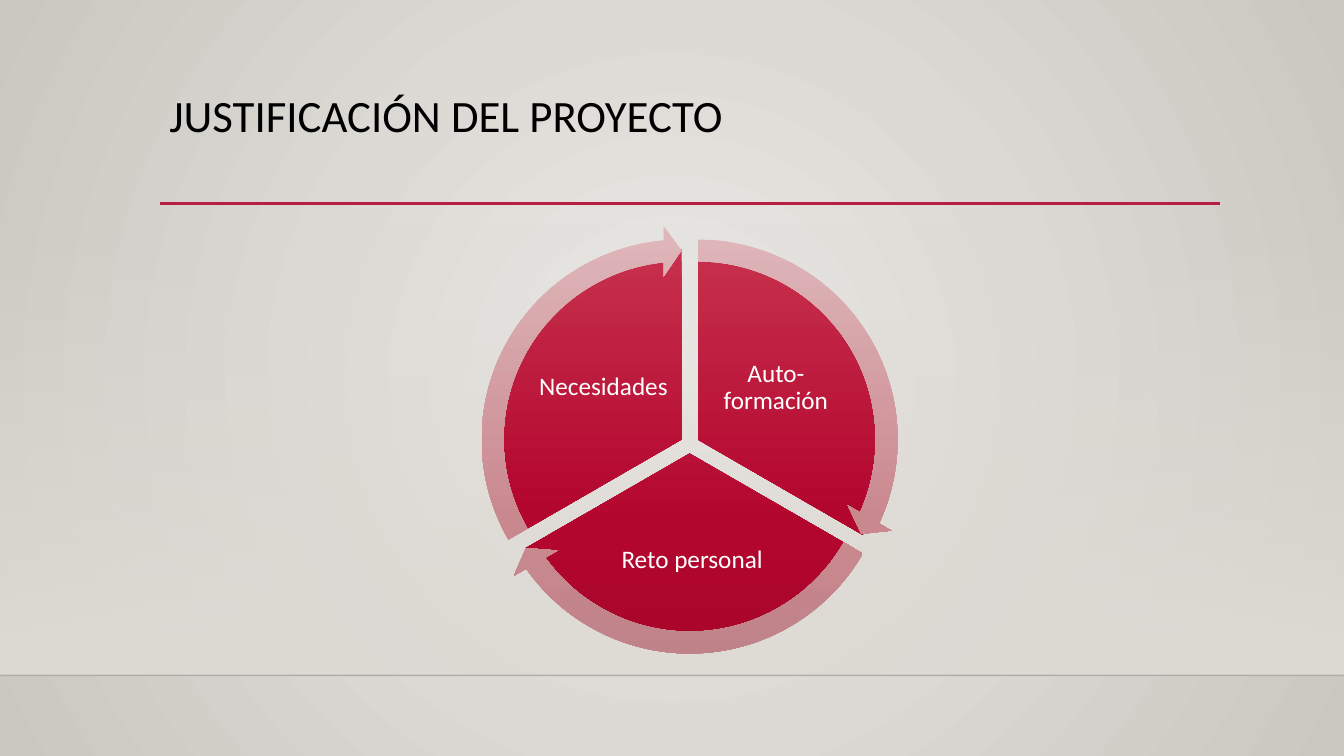
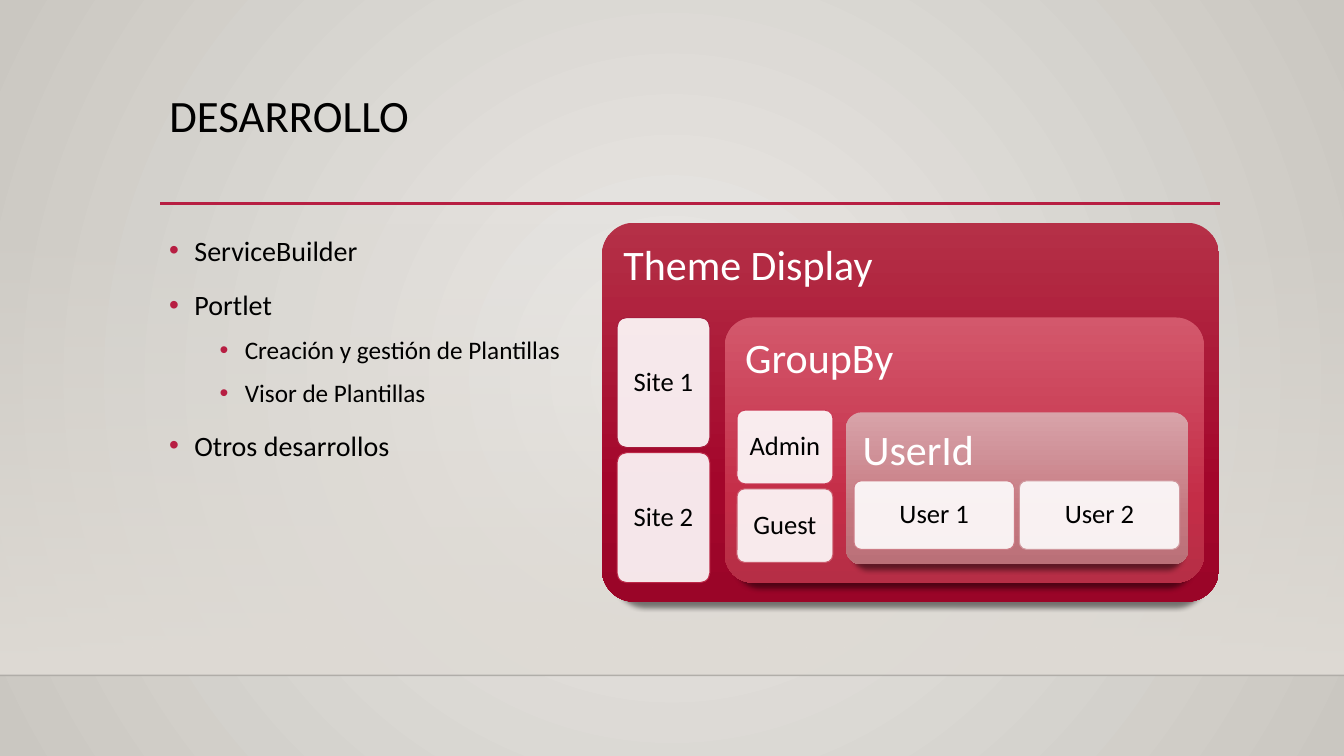
from lxml.etree import SubElement
from pptx import Presentation
from pptx.dml.color import RGBColor
from pptx.enum.shapes import MSO_CONNECTOR, MSO_SHAPE
from pptx.enum.text import MSO_ANCHOR, MSO_AUTO_SIZE, PP_ALIGN
from pptx.oxml.ns import qn
from pptx.util import Inches, Pt

# Shared style
FONT = "Calibri"
BLACK = RGBColor(0x00, 0x00, 0x00)
WHITE = RGBColor(0xFF, 0xFF, 0xFF)
CRIMSON = RGBColor(0xB7, 0x1E, 0x42)
SAND = RGBColor(0xDF, 0xDB, 0xD5)
PAPER = RGBColor(0xEC, 0xEA, 0xE7)
STONE = RGBColor(0xCA, 0xC7, 0xC1)


def shades(*codes):
    """Top, lower and bottom tone of a vertical gradient."""
    return list(zip((0, 69, 100), map(RGBColor.from_string, codes)))


RED = shades("C7304C", "B3062F", "AA062C")
PINK = shades("DFB7BB", "C9888E", "BE8288")
DEEP = shades("B53047", "A3062B", "9A0528")
ROSE = shades("D3586C", "C42D47", "B62E46")
DUSTY = shades("D8A3A9", "C4767E", "BA7078")


def add_alpha(parent, percent):
    for clr in parent.iter(qn("a:srgbClr")):
        SubElement(clr, qn("a:alpha"), val=str(percent * 1000))


def set_gradient(fill, owner, stops, radial=False):
    """Fill with (position, colour) stops, downwards or from the centre."""
    fill.gradient()
    grad = owner.xpath(".//a:gradFill")[0]
    for child in list(grad):
        grad.remove(child)
    gs_list = SubElement(grad, qn("a:gsLst"))
    for pos, color in stops:
        gs = SubElement(gs_list, qn("a:gs"), pos=str(pos * 1000))
        SubElement(gs, qn("a:srgbClr"), val=str(color))
    if radial:
        route = SubElement(grad, qn("a:path"), path="circle")
        SubElement(route, qn("a:fillToRect"),
                   dict.fromkeys("ltrb", "50000"))
    else:
        SubElement(grad, qn("a:lin"), ang="5400000", scaled="0")
    return gs_list


def write(tf, text, size=18, color=BLACK, align=PP_ALIGN.LEFT,
          anchor=MSO_ANCHOR.TOP, margin=None, spacing=0.9, before=0,
          bullet_indent=None, level=0, append=False):
    """Put one formatted paragraph into a text frame."""
    tf.word_wrap = True
    tf.auto_size = MSO_AUTO_SIZE.NONE
    tf.vertical_anchor = anchor
    if margin is not None:
        tf.margin_left = tf.margin_right = Inches(margin)
        tf.margin_top = tf.margin_bottom = Inches(margin)
    p = tf.add_paragraph() if append else tf.paragraphs[0]
    p.alignment, p.line_spacing, p.level = align, spacing, level
    p.space_before = Pt(before)
    if bullet_indent is not None:
        pPr = p._p.get_or_add_pPr()
        pPr.set("marL", str(Inches(bullet_indent)))
        pPr.set("indent", str(Inches(-0.25)))
        clr = SubElement(pPr, qn("a:buClr"))
        SubElement(clr, qn("a:srgbClr"), val=str(CRIMSON))
        SubElement(pPr, qn("a:buFont"), typeface="Arial")
        SubElement(pPr, qn("a:buChar"), char="•")
    r = p.add_run()
    r.text = text
    r.font.name, r.font.size, r.font.color.rgb = FONT, Pt(size), color


class Deck:
    def __init__(self):
        self.prs = Presentation()
        self.prs.slide_width = Inches(13.33)
        self.prs.slide_height = Inches(7.5)
        master = self.prs.slide_master
        set_gradient(master.background.fill, master.element,
                     [(0, PAPER), (100, STONE)], radial=True)
        self.s = None

    def slide(self, title, title_height):
        self.s = self.prs.slides.add_slide(self.prs.slide_layouts[5])
        # Floor band and rules
        band = self.shape(MSO_SHAPE.RECTANGLE, 0, 2.21, 13.33, 4.49)
        gs_list = set_gradient(band.fill, band._element,
                               [(0, SAND), (100, SAND)])
        add_alpha(gs_list[0], 0)
        floor = self.rule(0, 13.33, 6.7, BLACK, 1)
        add_alpha(floor.line._get_or_add_ln(), 20)
        self.rule(1.59, 12.1, 2.02, CRIMSON, 2.5)
        # Title
        sp = self.s.shapes.title
        sp.left, sp.top = Inches(1.58), Inches(0.88)
        sp.width, sp.height = Inches(10.5), Inches(title_height)
        write(sp.text_frame, title, size=32)

    def rule(self, x1, x2, y, color, width):
        line = self.s.shapes.add_connector(
            MSO_CONNECTOR.STRAIGHT, Inches(x1), Inches(y),
            Inches(x2), Inches(y))
        line.line.color.rgb, line.line.width = color, Pt(width)
        SubElement(line._element.spPr, qn("a:effectLst"))
        return line

    def shape(self, kind, x, y, w, h, stops=None, adj=()):
        sp = self.s.shapes.add_shape(kind, Inches(x), Inches(y),
                                     Inches(w), Inches(h))
        sp.line.fill.background()
        sp.shadow.inherit = False
        for i, value in enumerate(adj):
            sp.adjustments[i] = value
        if stops:
            set_gradient(sp.fill, sp._element, stops)
        return sp

    def disc(self, kind, center, size, stops, adj):
        cx, cy = center
        self.shape(kind, cx - size / 2, cy - size / 2, size, size, stops, adj)

    def text(self, x, y, w, h):
        return self.s.shapes.add_textbox(
            Inches(x), Inches(y), Inches(w), Inches(h)).text_frame

    def bullets(self, items, x, y, w, h):
        tf = self.text(x, y, w, h)
        for i, (level, item) in enumerate(items):
            write(tf, item, size=18 if level else 20, spacing=1.2,
                  before=0 if i == 0 else 5 if level else 10,
                  bullet_indent=0.25 + 0.5 * level, level=level,
                  append=i > 0)

    def panel(self, label, x, y, w, h, stops, corner=0.105):
        sp = self.shape(MSO_SHAPE.ROUNDED_RECTANGLE, x, y, w, h, stops,
                        [corner])
        effects = sp._element.spPr.find(qn("a:effectLst"))
        shadow = SubElement(effects, qn("a:outerShdw"), blurRad=str(Pt(4)),
                            dist=str(Pt(4)), dir="5400000", sx="96000",
                            algn="b", rotWithShape="0")
        SubElement(shadow, qn("a:srgbClr"), val=str(BLACK))
        add_alpha(shadow, 48)
        write(sp.text_frame, label, size=30, color=WHITE, margin=0.12)

    def cards(self, cards, x, y, w, h, across=False):
        """A row or column of (label, outline) cards, evenly spaced."""
        gap = 0.05
        for i, (label, outline) in enumerate(cards):
            dx, dy = (i * (w + gap), 0) if across else (0, i * (h + gap))
            sp = self.shape(MSO_SHAPE.ROUNDED_RECTANGLE, x + dx, y + dy, w, h,
                            adj=[0.105])
            sp.fill.solid()
            sp.fill.fore_color.rgb = WHITE
            add_alpha(sp._element.spPr.find(qn("a:solidFill")), 90)
            sp.line.color.rgb = RGBColor.from_string(outline)
            sp.line.width = Pt(0.75)
            write(sp.text_frame, label, size=19, align=PP_ALIGN.CENTER,
                  anchor=MSO_ANCHOR.MIDDLE, margin=0.08)


def build_reasons(deck):
    deck.slide("JUSTIFICACIÓN DEL PROYECTO", 0.94)
    # Sectors: label, label box, centre, start and end angle
    sectors = [
        ("Auto-formación", (7.02, 3.28, 1.35, 1.13), (6.92, 4.36), 270, 30),
        ("Reto personal", (5.85, 5.06, 2.03, 0.99), (6.84, 4.5), 30, 150),
        ("Necesidades", (5.31, 3.28, 1.35, 1.13), (6.76, 4.36), 150, 270),
    ]
    unit = 0.6  # adjustment value of one degree
    head = 3.275
    for label, box, center, start, end in sectors:
        deck.disc(MSO_SHAPE.PIE, center, 3.78, RED,
                  [start * unit, end * unit])
        write(deck.text(*box), label, color=WHITE, align=PP_ALIGN.CENTER,
              anchor=MSO_ANCHOR.MIDDLE, margin=0.03)
    # Arrows around the sectors
    for _, _, center, start, end in sectors:
        deck.disc(MSO_SHAPE.CIRCULAR_ARROW, center, 4.25, PINK,
                  [0.051, head, end * unit - head, start * unit, 0.059])


def build_development(deck):
    deck.slide("DESARROLLO", 1.16)
    deck.bullets([(0, "ServiceBuilder"), (0, "Portlet"),
                  (1, "Creación y gestión de Plantillas"),
                  (1, "Visor de Plantillas"), (0, "Otros desarrollos")],
                 1.58, 2.2, 5.08, 3.77)
    # Nested panels with their cards
    deck.panel("Theme Display", 5.97, 2.21, 6.12, 3.76, DEEP, corner=0.085)
    deck.cards([("Site 1", "A61B3C"), ("Site 2", "BB2847")],
               6.12, 3.15, 0.92, 1.29)
    deck.panel("GroupBy", 7.19, 3.15, 4.75, 2.63, ROSE)
    deck.cards([("Admin", "CA3A55"), ("Guest", "CA5C6D")],
               7.31, 4.07, 0.95, 0.73)
    deck.panel("UserId", 8.39, 4.09, 3.4, 1.51, DUSTY)
    deck.cards([("User 1", "CC7C86"), ("User 2", "D0999F")],
               8.47, 4.77, 1.59, 0.68, across=True)


def main():
    deck = Deck()
    build_reasons(deck)
    build_development(deck)
    deck.prs.save("out.pptx")


if __name__ == "__main__":
    main()
